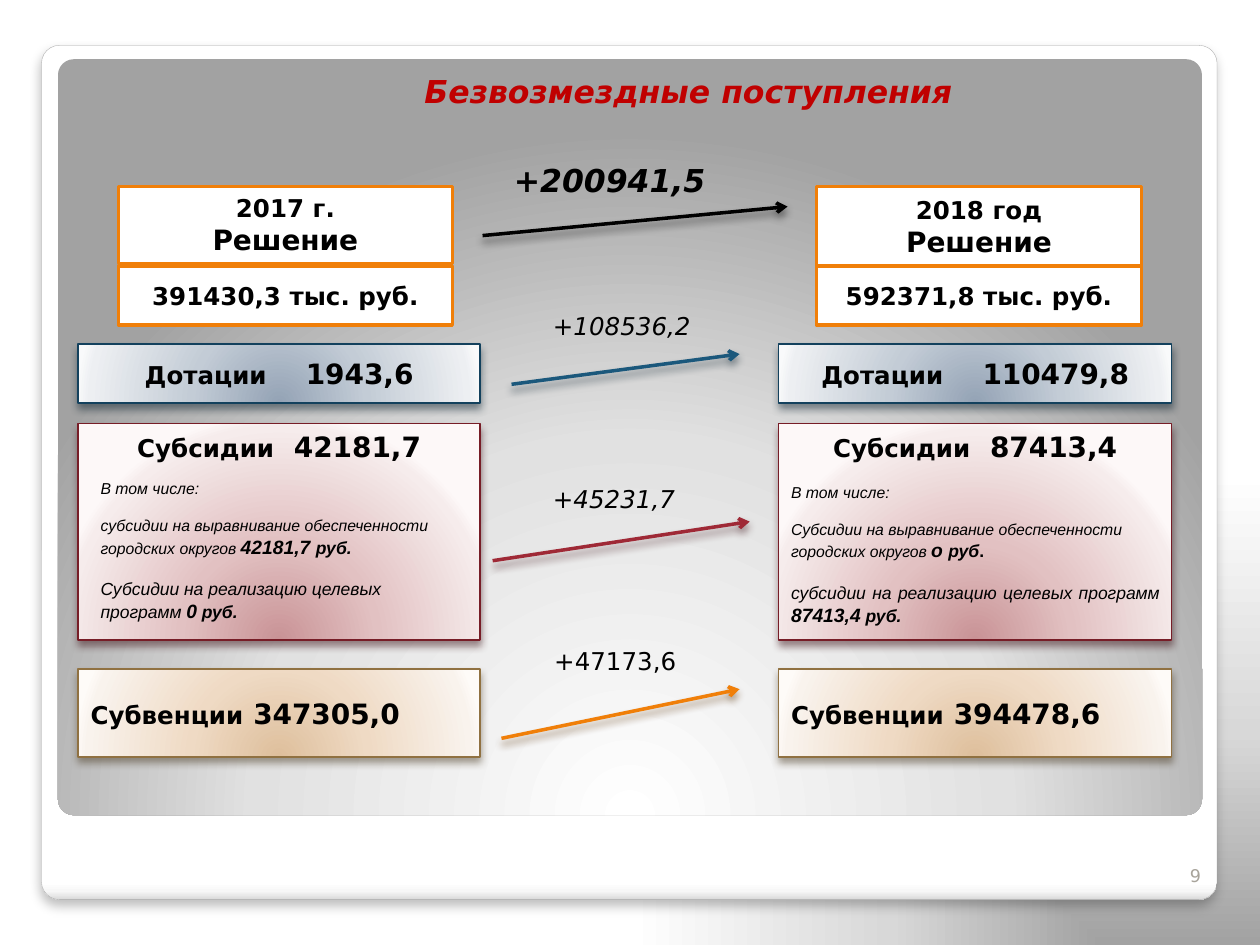
from lxml import etree
from pptx import Presentation, util as u
from pptx.dml.color import RGBColor
from pptx.enum import shapes as sh, text as tx
from pptx.oxml import parse_xml
from pptx.oxml.ns import qn, nsdecls

I = u.Inches
LEFT, CENTER, RIGHT, JUSTIFY = (tx.PP_ALIGN.LEFT, tx.PP_ALIGN.CENTER,
                                tx.PP_ALIGN.RIGHT, tx.PP_ALIGN.JUSTIFY)
TOP, MIDDLE, BOTTOM = tx.MSO_ANCHOR.TOP, tx.MSO_ANCHOR.MIDDLE, tx.MSO_ANCHOR.BOTTOM
LABEL, DETAIL = "DejaVu Sans", "Arial"
ORANGE = "F07F09"

# Content: a paragraph is (runs, format), a run is (text, format)
TITLE = "Безвозмездные поступления"
INTRO = ([("В том числе:", {})], {})
AMOUNT, UNIT = dict(size=11, bold=True), dict(size=10, bold=True)
DETAILS_2017 = [
    INTRO,
    ([("субсидии на выравнивание обеспеченности городских округов ", {}),
      ("42181,7 ", AMOUNT), ("руб.", UNIT)], dict(before=10.4)),
    ([("Субсидии на реализацию целевых программ ", dict(size=10)),
      ("0", AMOUNT), (" руб.", UNIT)], dict(before=11.5)),
]
DETAILS_2018 = [
    (INTRO[0], dict(before=11)),
    ([("Субсидии на выравнивание обеспеченности городских округов ", {}),
      ("о ", AMOUNT), ("руб", UNIT), (".", dict(UNIT, italic=False))], dict(before=10.4)),
    ([("субсидии на реализацию целевых программ ", dict(size=10)),
      ("87413,4", AMOUNT), (" руб.", UNIT)], dict(before=11.5, align=JUSTIFY)),
]
YEARS = [
    dict(year="2017 г.", total="391430,3 тыс. руб.", header=(0.94, 2.65, 0.61),
         column=(0.62, 3.19), amounts=("1943,6", "42181,7", "347305,0"), inside=[]),
    dict(year="2018 год", total="592371,8 тыс. руб.", header=(6.48, 2.58, 0.63),
         column=(6.18, 3.12), amounts=("110479,8", "87413,4", "394478,6"),
         inside=DETAILS_2018),
]
# name, top, height, alignment, anchor, extra gap before amount (pt),
# gradient colours, outline, shadow
GRANTS = [
    ("Дотации", 2.73, 0.47, CENTER, MIDDLE, 16.7,
     ("94A3B5", "C3CCD6", "EDEFF2", "F9FAFB"), "13415D", "091F2C"),
    ("Субсидии", 3.36, 1.72, CENTER, TOP, 5.6,
     ("C99396", "E2C1C2", "F6ECEC", "FDF8F8"), "771D27", "390D12"),
    ("Субвенции", 5.31, 0.7, JUSTIFY, MIDDLE, 0,
     ("DEBF9C", "EFDAC4", "F9F3ED", "FEFBF8"), "907141", "45361E"),
]
# change, label box, label format, arrow start, arrow end, colour, shadow
CHANGES = [
    ("+200941,5", (3.98, 1.23, 1.96, 0.4), dict(size=18, bold=True, italic=True),
     (3.83, 1.87), (6.25, 1.64), "000000", "000000"),
    ("+108536,2", (4.29, 2.42, 1.57, 0.34), dict(italic=True),
     (4.06, 3.05), (5.87, 2.81), "1B587C", "091F2C"),
    ("+45231,7", (4.29, 3.79, 1.57, 0.34), dict(italic=True),
     (3.91, 4.45), (5.95, 4.14), "9F2936", "390D12"),
    ("+47173,6", (4.3, 5.08, 1.49, 0.34), {},
     (3.98, 5.86), (5.87, 5.47), ORANGE, "562D01"),
]

deck = Presentation()
deck.slide_width, deck.slide_height = I(10), I(7.5)
slide = deck.slides.add_slide(deck.slide_layouts[6])


def rgb(value):
    return RGBColor.from_string(value)


def gradient(props, stops, shade):
    """Replace the solid fill in props by a gradient."""
    marks = "".join(f'<a:gs pos="{pos * 1000}"><a:srgbClr val="{color}"/></a:gs>'
                    for pos, color in stops)
    solid = props.find(qn("a:solidFill"))
    props.replace(solid, parse_xml(
        f'<a:gradFill {nsdecls("a")} rotWithShape="1"><a:gsLst>{marks}</a:gsLst>'
        f'{shade}</a:gradFill>'))


def toward(kind, *sides):
    l, t, r, b = (side * 1000 for side in sides)
    return (f'<a:path path="{kind}"><a:fillToRect l="{l}" t="{t}" r="{r}" b="{b}"/>'
            '</a:path>')


def cast_shadow(props, color, alpha=48, blur=4.5, distance=3):
    effects = props.find(qn("a:effectLst"))
    if effects is None:
        effects = etree.SubElement(props, qn("a:effectLst"))
    effects.append(parse_xml(
        f'<a:outerShdw {nsdecls("a")} blurRad="{u.Pt(blur)}" dist="{u.Pt(distance)}" '
        f'dir="5400000" algn="ctr" rotWithShape="0"><a:srgbClr val="{color}">'
        f'<a:alpha val="{alpha * 1000}"/></a:srgbClr></a:outerShdw>'))


def write(frame, paragraphs, size=14, font=LABEL, color="000000", bold=False,
          italic=False, align=LEFT, anchor=TOP, more=False):
    """Fill a text frame, or with more=True add paragraphs to it."""
    if not more:
        frame.word_wrap, frame.vertical_anchor = True, anchor
    for index, (runs, layout) in enumerate(paragraphs):
        para = frame.add_paragraph() if index or more else frame.paragraphs[0]
        para.alignment = layout.get("align", align)
        para.space_before = u.Pt(layout.get("before", 0))
        for words, look in runs:
            run = para.add_run()
            run.text = words
            run.font.name = font
            run.font.size = u.Pt(look.get("size", size))
            run.font.bold = look.get("bold", bold)
            run.font.italic = look.get("italic", italic)
            run.font.color.rgb = rgb(color)
            if look.get("spacing"):
                run.font._element.set("spc", str(round(look["spacing"] * 100)))


def label(box, paragraphs, **look):
    area = slide.shapes.add_textbox(*map(I, box))
    write(area.text_frame, paragraphs, **look)


def line_of(words, **look):
    return [(words, look)], {}


def panel(box, fill="FFFFFF", line=None, width=2, radius=None):
    kind = sh.MSO_SHAPE.RECTANGLE if radius is None else sh.MSO_SHAPE.ROUNDED_RECTANGLE
    shape = slide.shapes.add_shape(kind, *map(I, box))
    shape.shadow.inherit = False
    shape.fill.solid()
    shape.fill.fore_color.rgb = rgb(fill)
    if radius is not None:
        shape.adjustments[0] = radius
    if line:
        shape.line.color.rgb = rgb(line)
        shape.line.width = u.Pt(width)
    else:
        shape.line.fill.background()
    return shape


# Background and frame
slide.background.fill.solid()
gradient(slide.element.xpath(".//p:bgPr")[0],
         [(0, "A2A2A2"), (45, "D8D8D8"), (100, "FFFFFF")], toward("rect", 100, 100, 0, 0))
card = panel((0.33, 0.36, 9.33, 6.78), line="A4A4A4", width=0.16, radius=0.021)
gradient(card.element.spPr, [(0, "FFFFFF"), (98, "FFFFFF"), (99, "F7F7F7"), (100, "DADADA")],
         '<a:lin ang="5400000" scaled="0"/>')
cast_shadow(card.element.spPr, "000000", 25, 6, 4)
board = panel((0.46, 0.47, 9.08, 6), radius=0.021)
gradient(board.element.spPr, [(0, "FFFFFF"), (55, "E1E1E1"), (100, "A2A2A2")],
         toward("circle", 50, 175, 50, -75))
label((9.13, 6.68, 0.5, 0.4), [line_of("9")], size=10, color="A8A49B",
      align=RIGHT, anchor=BOTTOM)
label((3.27, 0.52, 5.51, 0.4), [line_of(TITLE)], size=18, color="C00000",
      bold=True, italic=True)

# Year columns: header, total and three kinds of grant
for year in YEARS:
    x, w, h = year["header"]
    decision = [line_of(year["year"]), line_of("Решение", size=16)]
    for box, words in (((x, 1.48, w, h), decision),
                       ((x, 2.11, w, 0.47), [line_of(year["total"])])):
        write(panel(box, line=ORANGE).text_frame, words, bold=True,
              align=CENTER, anchor=MIDDLE)
    x, w = year["column"]
    for grant, amount in zip(GRANTS, year["amounts"]):
        name, top, height, align, anchor, gap, colors, outline, shade = grant
        block = panel((x, top, w, height), line=outline, width=0.75)
        gradient(block.element.spPr, zip((0, 43, 93, 100), colors),
                 toward("circle", 50, 130, 50, -30))
        cast_shadow(block.element.spPr, shade)
        heading = [(name, {}), (" ", dict(size=16, spacing=gap)), (amount, dict(size=16))]
        write(block.text_frame, [(heading, {})], bold=True, align=align, anchor=anchor)
        if name == "Субсидии":
            write(block.text_frame, year["inside"], size=9, font=DETAIL,
                  italic=True, more=True)
label((0.7, 3.75, 3.05, 1.26), DETAILS_2017, size=9, font=DETAIL, italic=True)

# Changes between the years
for change, box, look, start, end, color, shade in CHANGES:
    arrow = slide.shapes.add_connector(sh.MSO_CONNECTOR.STRAIGHT, *map(I, start + end))
    arrow.line.color.rgb = rgb(color)
    arrow.line.width = u.Pt(2)
    etree.SubElement(arrow.line._get_or_add_ln(), qn("a:tailEnd"), type="arrow")
    cast_shadow(arrow._element.spPr, shade)
    label(box, [line_of(change)], **look)

deck.save("out.pptx")
